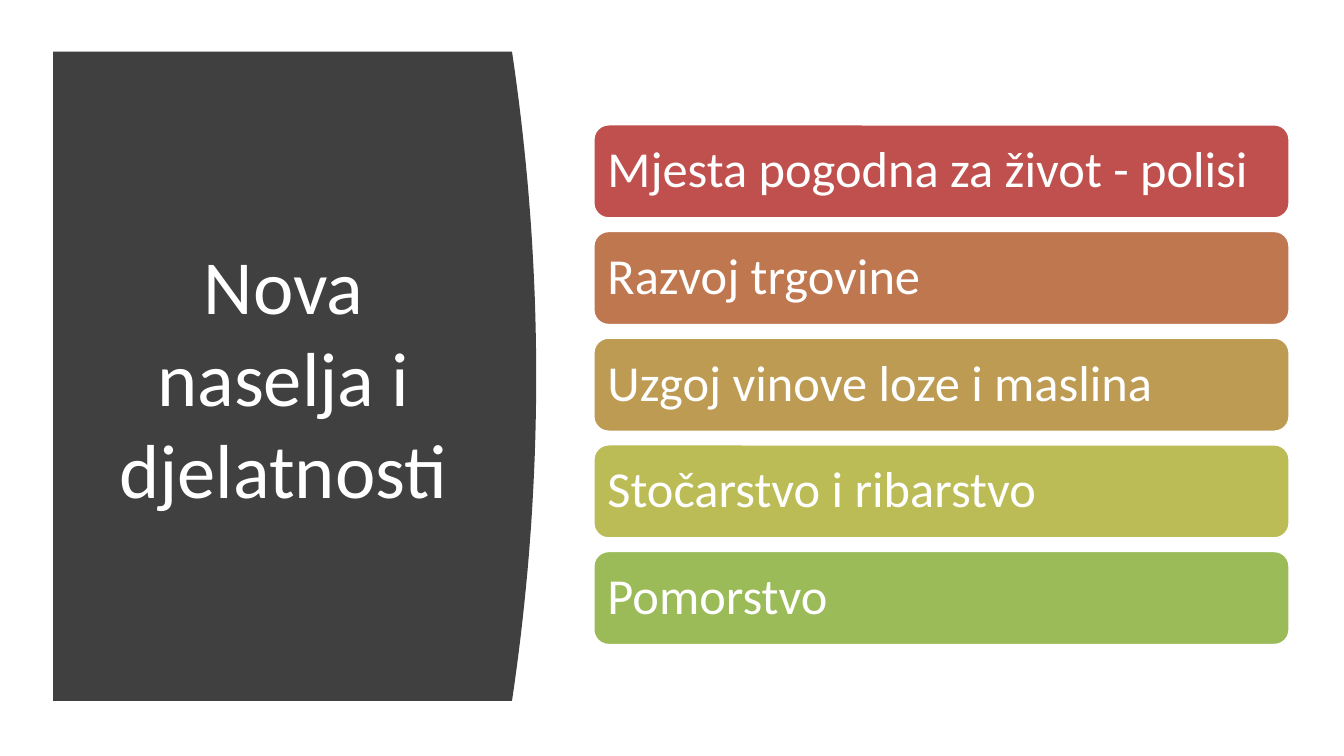
from pptx import Presentation
from pptx.dml.color import RGBColor
from pptx.enum.shapes import MSO_SHAPE as Shape
from pptx.enum.text import MSO_ANCHOR as Anchor, PP_ALIGN as Align
from pptx.util import Pt

PX = 4572  # EMU per px, 200 px to the inch
COLORS = {"panel": "404040", "white": "FFFFFF"}
ACTIVITIES = {
    "Mjesta pogodna za život - polisi": "C0504D",
    "Razvoj trgovine": "BF7750",
    "Uzgoj vinove loze i maslina": "BD9B53",
    "Stočarstvo i ribarstvo": "BCBC56",
    "Pomorstvo": "9BBB59",
}
TITLE_FORMAT = {"size": Pt(41), "name": "Calibri"}
BAR_FORMAT = {"size": Pt(27), "name": "Calibri"}


def px(*lengths):
    return [round(length * PX) for length in lengths]


def paint(shape, color):
    shape.shadow.inherit = False
    shape.fill.solid()
    shape.fill.fore_color.rgb = RGBColor.from_string(color)


def write(shape, text, font_format, align, spacing, inset):
    frame = shape.text_frame
    frame.word_wrap = True
    frame.vertical_anchor = Anchor.MIDDLE
    frame.margin_left = frame.margin_right = inset * PX
    paragraph = frame.paragraphs[0]
    paragraph.text = text
    paragraph.alignment = align
    paragraph.line_spacing = spacing
    for name, value in font_format.items():
        setattr(paragraph.font, name, value)
    paragraph.font.color.rgb = RGBColor.from_string(COLORS["white"])


def add_title_panel(slide, left, top, width, height, bulge=36, steps=40):
    """Dark panel whose right edge bows outwards as a parabola."""
    edge = []
    for step in range(steps + 1):
        part = step / steps
        bow = 4 * part * (1 - part)
        edge.append(px(left + width - bulge * (1 - bow), top + height * part))
    builder = slide.shapes.build_freeform(*px(left, top))
    builder.add_line_segments([*edge, px(left, top + height)], close=True)
    panel = builder.convert_to_shape()
    paint(panel, COLORS["panel"])
    panel.line.fill.background()

    title = slide.shapes.add_textbox(*px(left + 63, top + 89, 560, 786))
    write(title, "Nova naselja i djelatnosti", TITLE_FORMAT, Align.CENTER, 1.0, 20)


def add_activity_bars(slide, left, top, width, height, bar_height=142):
    pitch = (height - bar_height) / (len(ACTIVITIES) - 1)
    for index, (text, color) in enumerate(ACTIVITIES.items()):
        box = px(left, top + index * pitch, width, bar_height)
        bar = slide.shapes.add_shape(Shape.ROUNDED_RECTANGLE, *box)
        paint(bar, color)
        bar.line.color.rgb = RGBColor.from_string(COLORS["white"])
        bar.line.width = Pt(2)
        write(bar, text, BAR_FORMAT, Align.LEFT, 0.9, 15)


def main():
    presentation = Presentation()
    presentation.slide_width, presentation.slide_height = px(2000, 1125)
    slide = presentation.slides.add_slide(presentation.slide_layouts[6])
    add_title_panel(slide, 79, 77, 719, 966)
    add_activity_bars(slide, 882, 184, 1038, 777)
    presentation.save("out.pptx")


if __name__ == "__main__":
    main()
